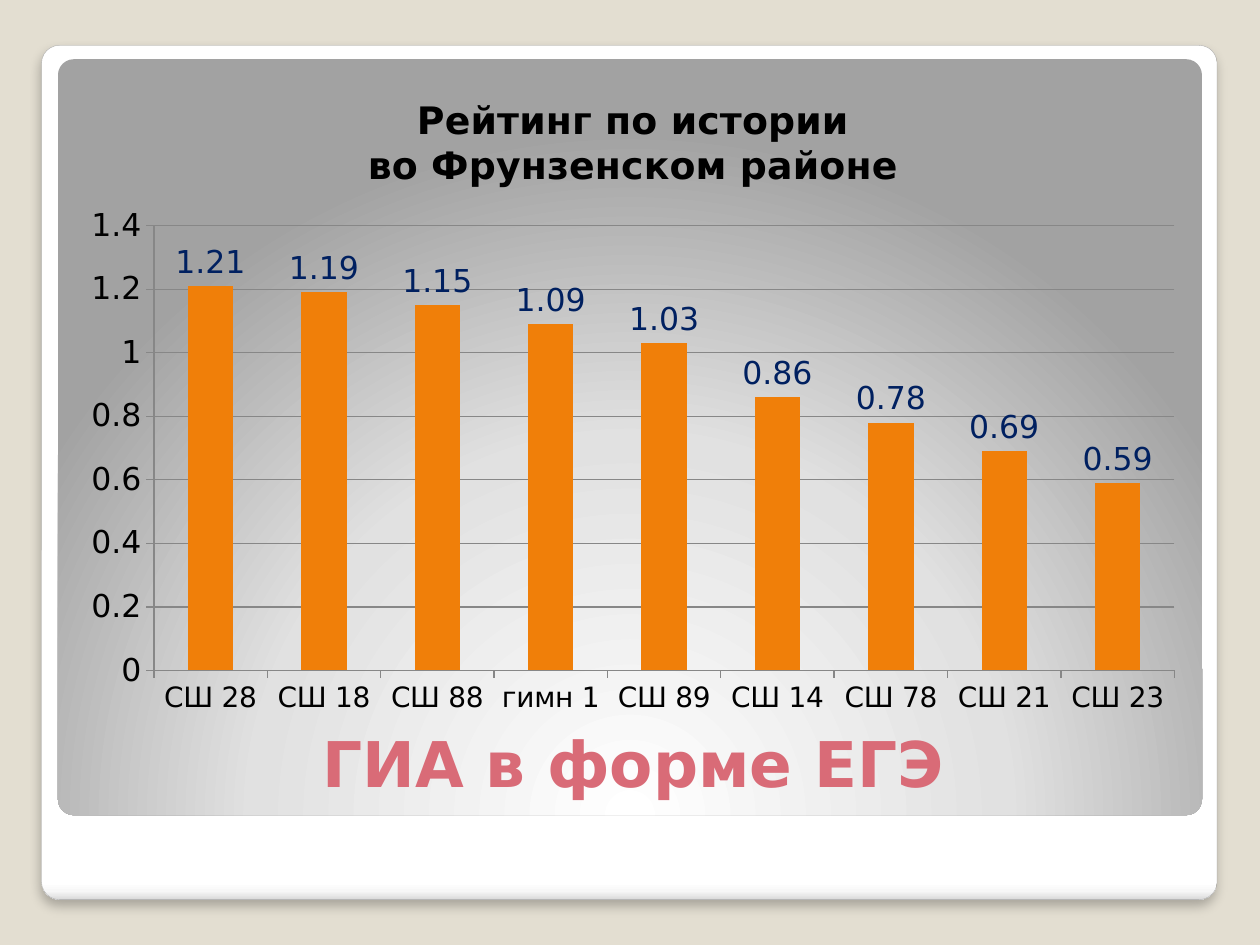
import pptx
import pptx.chart.data
import pptx.dml.color
import pptx.enum.chart
import pptx.enum.shapes
import pptx.enum.text
import pptx.oxml
import pptx.oxml.ns
import pptx.util
from pptx.util import Inches

FONT = "DejaVu Sans"
COLORS = {"page": "E3DED1", "edge": "A4A4A4", "heading": "D96B77", "text": "000000",
          "bar": "F07F09", "label": "002060", "grid": "878787"}
HEADING = "ГИА в форме ЕГЭ"
CHART_TITLE = ["Рейтинг по истории", "во Фрунзенском районе"]
RATINGS = [("СШ 28", 1.21), ("СШ 18", 1.19), ("СШ 88", 1.15), ("гимн 1", 1.09), ("СШ 89", 1.03),
           ("СШ 14", 0.86), ("СШ 78", 0.78), ("СШ 21", 0.69), ("СШ 23", 0.59)]
FRAME_STOPS = [(0, "FFFFFF"), (98, "FFFFFF"), (99, "F7F7F7"), (100, "DADADA")]
PANEL_STOPS = [(0, "FFFFFF"), (55, "E1E1E1"), (100, "A2A2A2")]
DOWNWARD = '<a:lin ang="5400000" scaled="0"/>'
FROM_BELOW = '<a:path path="circle"><a:fillToRect l="50000" t="175000" r="50000" b="-75000"/></a:path>'
FRAME_SHADOW = ('<a:effectLst {ns}><a:outerShdw blurRad="76200" dist="50800" dir="5400000" rotWithShape="0">'
                '<a:srgbClr val="000000"><a:alpha val="25000"/></a:srgbClr></a:outerShdw></a:effectLst>')
PLOT_AREA = {"x": 0.075, "y": 0.233, "w": 0.905, "h": 0.679}


def rgb(name):
    return pptx.dml.color.RGBColor.from_string(COLORS[name])


def parse(xml, prefix="a"):
    return pptx.oxml.parse_xml(xml.format(ns=pptx.oxml.ns.nsdecls(prefix)))


def style_font(font, size, color, bold=False):
    font.name, font.size, font.bold = FONT, pptx.util.Pt(size), bold
    font.color.rgb = rgb(color)


def add_rounded(page, left, top, width, height, stops, direction):
    box = page.shapes.add_shape(pptx.enum.shapes.MSO_SHAPE.ROUNDED_RECTANGLE,
                                Inches(left), Inches(top), Inches(width), Inches(height))
    box.adjustments[0] = 0.021
    box.shadow.inherit = False
    box.line.fill.background()
    box.fill.gradient()
    marks = "".join(f'<a:gs pos="{pos * 1000}"><a:srgbClr val="{color}"/></a:gs>' for pos, color in stops)
    gradient = parse(f'<a:gradFill {{ns}} rotWithShape="1"><a:gsLst>{marks}</a:gsLst>{direction}</a:gradFill>')
    properties = box._element.spPr
    properties.replace(properties.find(pptx.oxml.ns.qn("a:gradFill")), gradient)
    return box


def add_heading(page):
    box = page.shapes.add_textbox(Inches(0.55), Inches(5.23), Inches(8.95), Inches(1.17))
    frame = box.text_frame
    frame.word_wrap = True
    frame.vertical_anchor = pptx.enum.text.MSO_ANCHOR.BOTTOM
    para = frame.paragraphs[0]
    para.alignment = pptx.enum.text.PP_ALIGN.CENTER
    span = para.add_run()
    span.text = HEADING
    style_font(span.font, 36, "heading", True)


def place_plot(chart):
    """Fix the inner plot area as fractions of the chart."""
    plot_area = chart._chartSpace.chart.plotArea
    old = plot_area.find(pptx.oxml.ns.qn("c:layout"))
    if old is not None:
        plot_area.remove(old)
    sizes = "".join(f'<c:{key} val="{value}"/>' for key, value in PLOT_AREA.items())
    plot_area.insert(0, parse('<c:layout {ns}><c:manualLayout><c:layoutTarget val="inner"/>'
                              '<c:xMode val="edge"/><c:yMode val="edge"/>'
                              f'{sizes}</c:manualLayout></c:layout>', "c"))


def add_rating_chart(page):
    data = pptx.chart.data.CategoryChartData()
    data.categories = [school for school, _ in RATINGS]
    data.add_series("Series 1", [value for _, value in RATINGS])
    chart = page.shapes.add_chart(pptx.enum.chart.XL_CHART_TYPE.COLUMN_CLUSTERED, Inches(0.55),
                                  Inches(0.58), Inches(8.95), Inches(5.2), data).chart
    style_font(chart.font, 18, "text")
    chart.has_legend = False
    chart.has_title = True
    frame = chart.chart_title.text_frame
    for index, line in enumerate(CHART_TITLE):
        para = frame.add_paragraph() if index else frame.paragraphs[0]
        span = para.add_run()
        span.text = line
        style_font(span.font, 21.6, "text", True)

    for axis, size in ((chart.category_axis, 16), (chart.value_axis, 18)):
        style_font(axis.tick_labels.font, size, "text")
        axis.major_tick_mark = pptx.enum.chart.XL_TICK_MARK.OUTSIDE
        axis.format.line.color.rgb = rgb("grid")
    values = chart.value_axis
    values.minimum_scale, values.maximum_scale, values.major_unit = 0, 1.4, 0.2
    values.major_gridlines.format.line.color.rgb = rgb("grid")

    plot = chart.plots[0]
    plot.vary_by_categories = False
    plot.gap_width = 150
    bars = plot.series[0]
    bars.format.fill.solid()
    bars.format.fill.fore_color.rgb = rgb("bar")
    labels = bars.data_labels
    labels.show_value = True
    labels.position = pptx.enum.chart.XL_LABEL_POSITION.OUTSIDE_END
    style_font(labels.font, 18, "label")
    place_plot(chart)


def main():
    deck = pptx.Presentation()
    deck.slide_width, deck.slide_height = Inches(10), Inches(7.5)
    page = deck.slides.add_slide(deck.slide_layouts[6])
    page.background.fill.solid()
    page.background.fill.fore_color.rgb = rgb("page")

    frame = add_rounded(page, 0.33, 0.36, 9.33, 6.78, FRAME_STOPS, DOWNWARD)
    frame.line.color.rgb = rgb("edge")
    frame.line.width = pptx.util.Pt(0.16)
    properties = frame._element.spPr
    properties.replace(properties.find(pptx.oxml.ns.qn("a:effectLst")), parse(FRAME_SHADOW))
    add_rounded(page, 0.46, 0.47, 9.08, 6, PANEL_STOPS, FROM_BELOW)
    add_heading(page)
    add_rating_chart(page)
    deck.save("out.pptx")


if __name__ == "__main__":
    main()
